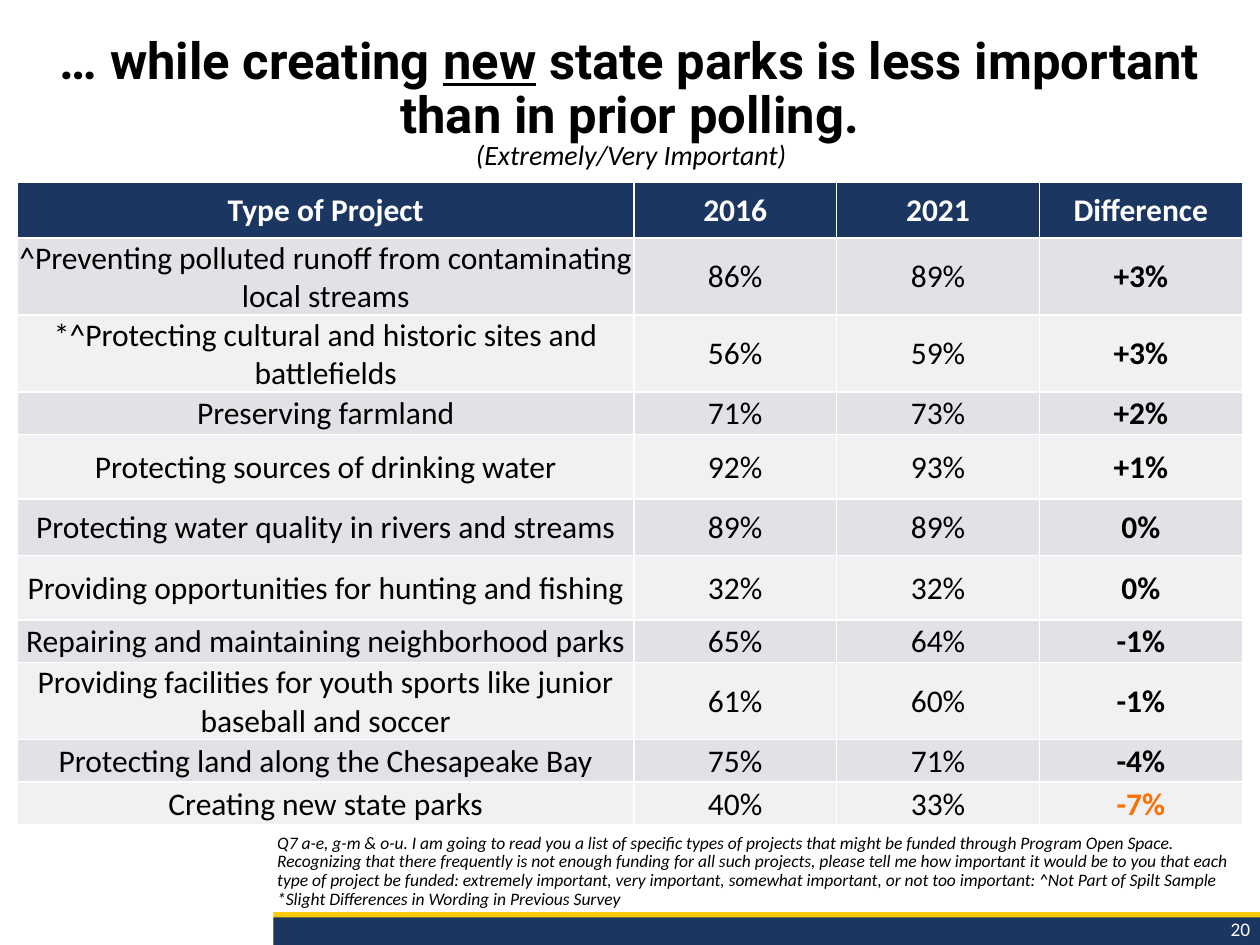
import pptx
import pptx.util
import pptx.dml.color
import pptx.enum.text
import pptx.enum.shapes
import pptx.oxml.xmlchemy

Pt = pptx.util.Pt
ALIGN = pptx.enum.text.PP_ALIGN
ANCHOR = pptx.enum.text.MSO_ANCHOR
HUE = {"navy": "1B3661", "head": "1B3660", "gold": "FCCA09", "dark": "E2E2E6",
       "light": "F1F1F3", "black": "000000", "white": "FFFFFF", "fall": "F97103"}

deck = pptx.Presentation()
deck.slide_width = pptx.util.Inches(10)
deck.slide_height = pptx.util.Inches(7.5)
slide = deck.slides.add_slide(deck.slide_layouts[1])
shapes = slide.shapes


def area(left, top, width, height):
    wide, high = deck.slide_width / 100, deck.slide_height / 100
    return int(left * wide), int(top * high), int(width * wide), int(height * high)


def style(para, size, hue="black", bold=False, italic=False, align=ALIGN.CENTER, face="Calibri"):
    para.alignment = align
    for run in para.runs:
        run.font.name, run.font.size = face, Pt(size)
        run.font.bold, run.font.italic = bold, italic
        run.font.color.rgb = pptx.dml.color.RGBColor.from_string(HUE[hue])


for hue, top, height in [("gold", 96.53, 3.6), ("navy", 97.07, 3.2)]:
    bar = shapes.add_shape(pptx.enum.shapes.MSO_SHAPE.RECTANGLE, *area(21.7, top, 78.3, height))
    bar.shadow.inherit = False
    bar.fill.solid()
    bar.fill.fore_color.rgb = pptx.dml.color.RGBColor.from_string(HUE[hue])
    bar.line.fill.background()

title, note = shapes.title, slide.placeholders[1]
for holder, box, anchor in [(title, (0, 3.07, 100, 16.27), ANCHOR.TOP),
                            (note, (21, 89.73, 78.6, 7.2), ANCHOR.BOTTOM)]:
    holder.left, holder.top, holder.width, holder.height = area(*box)
    holder.text_frame.auto_size = pptx.enum.text.MSO_AUTO_SIZE.NONE
    holder.text_frame.vertical_anchor = anchor
    holder.text_frame.paragraphs[0].line_spacing = 0.9

head = title.text_frame.paragraphs[0]
for part in ["… while creating ", "new", " state parks is less important than in prior polling."]:
    run = head.add_run()
    run.text = part
    run.font.underline = part == "new"
style(head, 29, bold=True, face="Roboto")

para = note.text_frame.paragraphs[0]
para.text = (
    "Q7 a-e, g-m & o-u. I am going to read you a list of specific types of projects that might be "
    "funded through Program Open Space. Recognizing that there frequently is not enough funding for "
    "all such projects, please tell me how important it would be to you that each type of project be "
    "funded: extremely important, very important, somewhat important, or not too important: "
    "^Not Part of Spilt Sample *Slight Differences in Wording in Previous Survey")
props = para._p.get_or_add_pPr()
props.set("marL", "0")
props.set("indent", "0")
props.append(pptx.oxml.xmlchemy.OxmlElement("a:buNone"))
para.space_before = Pt(0)
style(para, 10, italic=True, align=ALIGN.LEFT)

for text, box, size, hue, italic, align in [
        ("(Extremely/Very Important)", (0.2, 13.87, 99.8, 4.93), 16, "black", True, ALIGN.CENTER),
        ("20", (85.4, 96.4, 14.8, 3.87), 11, "white", False, ALIGN.RIGHT)]:
    frame = shapes.add_textbox(*area(*box)).text_frame
    frame.word_wrap = True
    frame.text = text
    style(frame.paragraphs[0], size, hue, italic=italic, align=align)

rows = [
    ("Type of Project", "2016", "2021", "Difference"),
    ("^Preventing polluted runoff from contaminating local streams", "86%", "89%", "+3%"),
    ("*^Protecting cultural and historic sites and battlefields", "56%", "59%", "+3%"),
    ("Preserving farmland", "71%", "73%", "+2%"),
    ("Protecting sources of drinking water", "92%", "93%", "+1%"),
    ("Protecting water quality in rivers and streams", "89%", "89%", "0%"),
    ("Providing opportunities for hunting and fishing", "32%", "32%", "0%"),
    ("Repairing and maintaining neighborhood parks", "65%", "64%", "-1%"),
    ("Providing facilities for youth sports like junior baseball and soccer", "61%", "60%", "-1%"),
    ("Protecting land along the Chesapeake Bay", "75%", "71%", "-4%"),
    ("Creating new state parks", "40%", "33%", "-7%"),
]
tall = {0: 5.87, 4: 6.8, 5: 6, 6: 6.8}
spot = area(1.4, 19.33, 97.2, 67.73)
grid = shapes.add_table(len(rows), 4, *spot)
table = grid.table
for col, share in zip(table.columns, [48.9, 16.1, 16.1, 16.1]):
    col.width = area(0, 0, share, 0)[2]

for r, row in enumerate(rows):
    table.rows[r].height = area(0, 0, 0, tall.get(r, 4.53))[3]
    fill = "head" if r == 0 else "dark" if r % 2 else "light"
    for c, text in enumerate(row):
        cell = table.cell(r, c)
        cell.text_frame.text = text
        cell.vertical_anchor = ANCHOR.MIDDLE
        cell.fill.solid()
        cell.fill.fore_color.rgb = pptx.dml.color.RGBColor.from_string(HUE[fill])
        if r:
            cell.margin_left = cell.margin_right = cell.margin_top = pptx.util.Inches(0.01)
            cell.margin_bottom = 0
        hue = "white" if r == 0 else "fall" if text == "-7%" else "black"
        style(cell.text_frame.paragraphs[0], 18, hue, bold=r == 0 or c == 3)
grid.height = spot[3]

deck.save("out.pptx")
